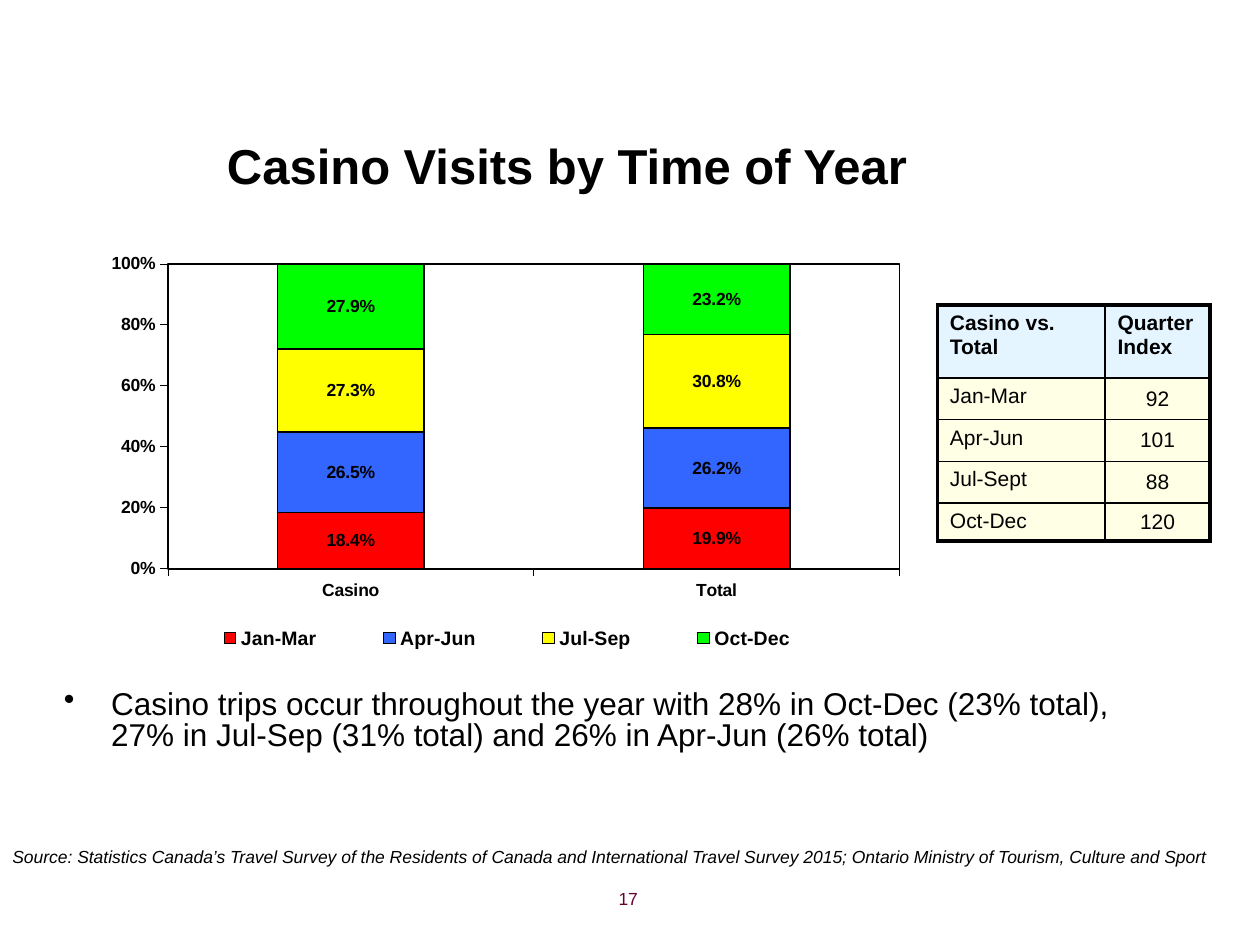
"""Build the slide on casino visits by time of year."""
from lxml.etree import SubElement
from pptx import Presentation
from pptx.chart.data import CategoryChartData
from pptx.dml.color import RGBColor
from pptx.enum.chart import XL_CHART_TYPE, XL_LABEL_POSITION, XL_LEGEND_POSITION, XL_TICK_MARK
from pptx.enum.text import MSO_ANCHOR, PP_ALIGN
from pptx.oxml import parse_xml
from pptx.oxml.ns import nsdecls, qn
from pptx.util import Cm, Pt

COLORS = {
    "black": "000000",
    "plum": "660033",
    "red": "FF0000",
    "blue": "3366FF",
    "yellow": "FFFF00",
    "green": "00FF00",
    "header": "CCECFF",
    "body": "FFFFCC",
}
FONT = "Arial"


def write_text(frame, text, size=12, bold=False, italic=False, color="black",
               align=PP_ALIGN.LEFT, anchor=MSO_ANCHOR.TOP):
    frame.word_wrap = True
    frame.vertical_anchor = anchor
    para = frame.paragraphs[0]
    para.alignment = align
    span = para.add_run()
    span.text = text
    span.font.name = FONT
    span.font.size = Pt(size)
    span.font.bold = bold
    span.font.italic = italic
    span.font.color.rgb = RGBColor.from_string(COLORS[color])
    return para


def place_in_chart(element, index, target, x, y, w, h):
    for old_layout in element.findall(qn("c:layout")):
        element.remove(old_layout)
    element.insert(index, parse_xml(
        f'<c:layout {nsdecls("c")}><c:manualLayout>{target}'
        '<c:xMode val="edge"/><c:yMode val="edge"/>'
        f'<c:x val="{x}"/><c:y val="{y}"/><c:w val="{w}"/><c:h val="{h}"/>'
        '</c:manualLayout></c:layout>'))


deck = Presentation()
deck.slide_width, deck.slide_height = Cm(25.4), Cm(19.05)
page = deck.slides.add_slide(deck.slide_layouts[6])

title_box = page.shapes.add_textbox(Cm(0), Cm(2.46), Cm(22.86), Cm(1.75))
write_text(title_box.text_frame, "Casino Visits by Time of Year", size=28, bold=True,
           align=PP_ALIGN.CENTER, anchor=MSO_ANCHOR.MIDDLE)

finding_box = page.shapes.add_textbox(Cm(1.04), Cm(13.82), Cm(22.81), Cm(3.81))
finding = write_text(
    finding_box.text_frame,
    "Casino trips occur throughout the year with 28% in Oct-Dec (23% total), "
    "27% in Jul-Sep (31% total) and 26% in Apr-Jun (26% total)", size=18)
properties = finding._p.get_or_add_pPr()
properties.set("marL", str(Cm(0.95)))
properties.set("indent", str(-Cm(0.95)))
SubElement(properties, qn("a:buChar")).set("char", "•")
finding.line_spacing = 0.8

quarters = [
    ("Jan-Mar", (0.184, 0.199), "red"),
    ("Apr-Jun", (0.265, 0.262), "blue"),
    ("Jul-Sep", (0.273, 0.308), "yellow"),
    ("Oct-Dec", (0.279, 0.232), "green"),
]
chart_data = CategoryChartData(number_format="0.0%")
chart_data.categories = ["Casino", "Total"]
for name, shares, color in quarters:
    chart_data.add_series(name, shares)
chart = page.shapes.add_chart(XL_CHART_TYPE.COLUMN_STACKED_100, Cm(1.63), Cm(5),
                              Cm(16.69), Cm(9.65), chart_data).chart
chart.has_title = False
chart.has_legend = True
chart.legend.position = XL_LEGEND_POSITION.BOTTOM
chart.legend.include_in_layout = False

black = RGBColor.from_string(COLORS["black"])
fonts = [(chart.font, 10), (chart.legend.font, 11.1)]
for axis in (chart.category_axis, chart.value_axis):
    axis.has_major_gridlines = False
    axis.major_tick_mark = XL_TICK_MARK.OUTSIDE
    axis.minor_tick_mark = XL_TICK_MARK.NONE
    axis.format.line.color.rgb = black
    axis.format.line.width = Pt(0.25)
    fonts.append((axis.tick_labels.font, 10))
chart.value_axis.minimum_scale = 0
chart.value_axis.maximum_scale = 1
chart.value_axis.major_unit = 0.2
chart.value_axis.tick_labels.number_format = "0%"
chart.value_axis.tick_labels.number_format_is_linked = False

plot = chart.plots[0]
plot.gap_width = 150
plot.overlap = 100
plot.vary_by_categories = False
for series, (name, shares, color) in zip(plot.series, quarters):
    series.format.fill.solid()
    series.format.fill.fore_color.rgb = RGBColor.from_string(COLORS[color])
    series.format.line.color.rgb = black
    series.format.line.width = Pt(1)
    labels = series.data_labels
    labels.show_value = True
    labels.number_format = "0.0%"
    labels.number_format_is_linked = False
    labels.position = XL_LABEL_POSITION.CENTER
    fonts.append((labels.font, 10))
for font, size in fonts:
    font.name = FONT
    font.size = Pt(size)
    font.bold = True
    font.color.rgb = black

plot_area = chart._chartSpace.chart.plotArea
place_in_chart(plot_area, 0, '<c:layoutTarget val="inner"/>', 0.105, 0.033, 0.884, 0.637)
place_in_chart(chart.legend._element, 1, "", 0.1, 0.77, 0.83, 0.09)
plot_area.append(parse_xml(
    f'<c:spPr {nsdecls("c", "a")}><a:noFill/><a:ln w="{Pt(1)}"><a:solidFill>'
    f'<a:srgbClr val="{COLORS["black"]}"/></a:solidFill></a:ln></c:spPr>'))

rows = [("Casino vs. Total", "Quarter Index"), ("Jan-Mar", "92"), ("Apr-Jun", "101"),
        ("Jul-Sept", "88"), ("Oct-Dec", "120")]
row_heights = [1.47, 0.84, 0.84, 0.84, 0.76]
column_widths = [3.38, 2.11]
table = page.shapes.add_table(len(rows), len(column_widths), Cm(18.9), Cm(6.15),
                              Cm(sum(column_widths)), Cm(sum(row_heights))).table
table.first_row = False
table.horz_banding = False
for column, width in zip(table.columns, column_widths):
    column.width = Cm(width)
for row_index, (texts, height) in enumerate(zip(rows, row_heights)):
    table.rows[row_index].height = Cm(height)
    is_header = row_index == 0
    for column_index, text in enumerate(texts):
        cell = table.cell(row_index, column_index)
        is_index = column_index == 1 and not is_header
        margin_x, margin_y = (0, 0) if is_index else (0.25, 0.13)
        cell.margin_left = cell.margin_right = Cm(margin_x)
        cell.margin_top = cell.margin_bottom = Cm(margin_y)
        write_text(cell.text_frame, text, bold=is_header,
                   align=PP_ALIGN.CENTER if is_index else PP_ALIGN.LEFT)
        cell.vertical_anchor = MSO_ANCHOR.MIDDLE if is_index else MSO_ANCHOR.TOP
        cell.fill.solid()
        cell.fill.fore_color.rgb = RGBColor.from_string(COLORS["header" if is_header else "body"])
        cell_properties = cell._tc.get_or_add_tcPr()
        SubElement(cell_properties.find(".//" + qn("a:srgbClr")), qn("a:alpha")).set("val", "50000")
        outer_sides = {"lnL": column_index == 0, "lnR": column_index == 1,
                       "lnT": is_header, "lnB": row_index == len(rows) - 1}
        for position, (side, is_outer) in enumerate(outer_sides.items()):
            cell_properties.insert(position, parse_xml(
                f'<a:{side} {nsdecls("a")} w="{Pt(2.25 if is_outer else 1)}"><a:solidFill>'
                f'<a:srgbClr val="{COLORS["black"]}"/></a:solidFill></a:{side}>'))

number_box = page.shapes.add_textbox(Cm(7.19), Cm(17.78), Cm(5.92), Cm(0.89))
write_text(number_box.text_frame, "17", size=10, color="plum", align=PP_ALIGN.RIGHT)

source_box = page.shapes.add_textbox(Cm(0), Cm(16.94), Cm(24.89), Cm(0.69))
write_text(
    source_box.text_frame,
    "Source: Statistics Canada’s Travel Survey of the Residents of Canada and International "
    "Travel Survey 2015; Ontario Ministry of Tourism, Culture and Sport", size=10, italic=True)

deck.save("out.pptx")
